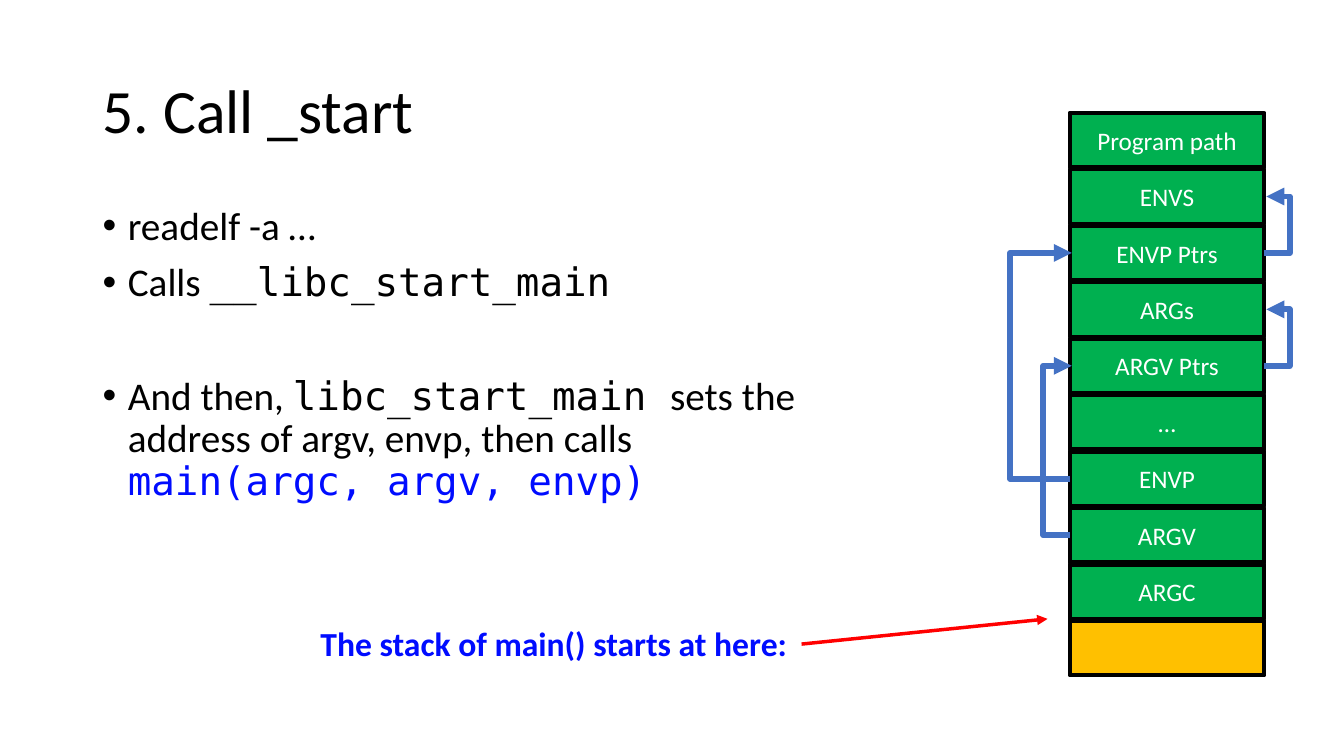
from lxml.etree import SubElement
from pptx import Presentation
from pptx.dml.color import RGBColor
from pptx.enum.shapes import MSO_CONNECTOR, MSO_SHAPE
from pptx.enum.text import MSO_ANCHOR, PP_ALIGN
from pptx.oxml.ns import qn
from pptx.util import Inches, Pt

COLORS = {"black": "000000", "white": "FFFFFF", "blue": "000CFF", "green": "00B050",
          "amber": "FFC000", "link": "4472C4", "red": "FF0000"}
SANS, MONO = "Calibri", "DejaVu Sans Mono"

# The stack is one column of equal rows.
STACK_LEFT, STACK_TOP, CELL_WIDTH, CELL_HEIGHT, ROW = 10.61, 1.12, 1.93, 0.54, 0.56
STACK_RIGHT = STACK_LEFT + CELL_WIDTH
CELLS = ["Program path", "ENVS", "ENVP Ptrs", "ARGs", "ARGV Ptrs", "…",
         "ENVP", "ARGV", "ARGC", ""]
# Pointing cell, cell pointed at, side of the stack, distance of the lane from it
POINTERS = [("ARGV", "ARGV Ptrs", STACK_LEFT, -0.26),
            ("ARGV Ptrs", "ARGs", STACK_RIGHT, 0.25),
            ("ENVP", "ENVP Ptrs", STACK_LEFT, -0.59),
            ("ENVP Ptrs", "ENVS", STACK_RIGHT, 0.25)]
NUDGE = 0.02  # width of an elbow, which its adjustment is a multiple of

# Space before each bullet in points, then its spans of text, font and colour
BULLETS = [
    (10, [("readelf -a …", SANS, "black")]),
    (10, [("Calls ", SANS, "black"), ("__libc_start_main", MONO, "black")]),
    (51, [("And then, ", SANS, "black"), ("libc_start_main ", MONO, "black"),
          ("sets the address of argv, envp, then calls ", SANS, "black"),
          ("main(argc, argv, envp)", MONO, "blue")]),
]


def rgb(name):
    return RGBColor.from_string(COLORS[name])


def apply(target, formats):
    for name, value in formats.items():
        setattr(target, name, value)


def add_span(para, text, color, **font):
    span = para.add_run()
    span.text = text
    apply(span.font, {"name": SANS, **font})
    span.font.color.rgb = rgb(color)


def add_text_box(page, left, top, width, height, anchor=MSO_ANCHOR.TOP):
    box = page.shapes.add_textbox(*map(Inches, (left, top, width, height)))
    apply(box.text_frame, {"word_wrap": True, "vertical_anchor": anchor})
    return box.text_frame


def add_bullet(para, space_before, spans):
    apply(para, {"line_spacing": 0.9, "space_before": Pt(space_before)})
    properties = para._p.get_or_add_pPr()
    properties.set("marL", str(Inches(0.25)))
    properties.set("indent", str(-Inches(0.25)))
    SubElement(properties, qn("a:buFont"), typeface="Arial")
    SubElement(properties, qn("a:buChar"), char="•")
    for text, font, color in spans:
        add_span(para, text, color, name=font, size=Pt(28))


def add_cell(page, row, label):
    cell = page.shapes.add_shape(
        MSO_SHAPE.RECTANGLE, Inches(STACK_LEFT), Inches(STACK_TOP + row * ROW),
        Inches(CELL_WIDTH), Inches(CELL_HEIGHT))
    cell.shadow.inherit = False
    cell.fill.solid()
    cell.fill.fore_color.rgb = rgb("green" if label else "amber")
    cell.line.color.rgb = rgb("black")
    cell.line.width = Pt(3)
    if label:
        cell.text_frame.vertical_anchor = MSO_ANCHOR.MIDDLE
        para = cell.text_frame.paragraphs[0]
        para.alignment = PP_ALIGN.CENTER
        add_span(para, label, "white", size=Pt(18))


def add_arrow(page, kind, ends, color, weight):
    arrow = page.shapes.add_connector(kind, *map(Inches, ends))
    arrow.line.color.rgb = rgb(color)
    arrow.line.width = Pt(weight)
    SubElement(arrow.line._get_or_add_ln(), qn("a:tailEnd"), type="triangle")
    SubElement(arrow._element.spPr, qn("a:effectLst"))
    return arrow


def add_pointer(page, source, target, side, lane):
    """Link two cells by an elbow that runs in a lane beside the stack."""
    start, end = (STACK_TOP + CELLS.index(label) * ROW + CELL_HEIGHT / 2
                  for label in (source, target))
    arrow = add_arrow(page, MSO_CONNECTOR.ELBOW, (side, start, side + NUDGE, end),
                      "link", 4.25)
    guides = arrow._element.spPr.find(qn("a:prstGeom")).get_or_add_avLst()
    SubElement(guides, qn("a:gd"), name="adj1", fmla=f"val {round(lane / NUDGE * 100000)}")


def main():
    deck = Presentation()
    apply(deck, {"slide_width": Inches(13.33), "slide_height": Inches(7.5)})
    page = deck.slides.add_slide(deck.slide_layouts[6])

    title = add_text_box(page, 0.92, 0.4, 11.5, 1.45, MSO_ANCHOR.MIDDLE).paragraphs[0]
    title.line_spacing = 0.9
    add_span(title, "5. Call _start", "black", size=Pt(44))

    body = add_text_box(page, 0.92, 2, 7.32, 4.76)
    for index, (space_before, spans) in enumerate(BULLETS):
        para = body.add_paragraph() if index else body.paragraphs[0]
        add_bullet(para, space_before, spans)

    for row, label in enumerate(CELLS):
        add_cell(page, row, label)
    for pointer in POINTERS:
        add_pointer(page, *pointer)

    add_arrow(page, MSO_CONNECTOR.STRAIGHT, (7.95, 6.39, 10.39, 6.14), "red", 2.5)
    note = add_text_box(page, 3.08, 6.13, 5.27, 0.5).paragraphs[0]
    add_span(note, "The stack of main() starts at here:", "blue", size=Pt(24), bold=True)

    deck.save("out.pptx")


if __name__ == "__main__":
    main()
